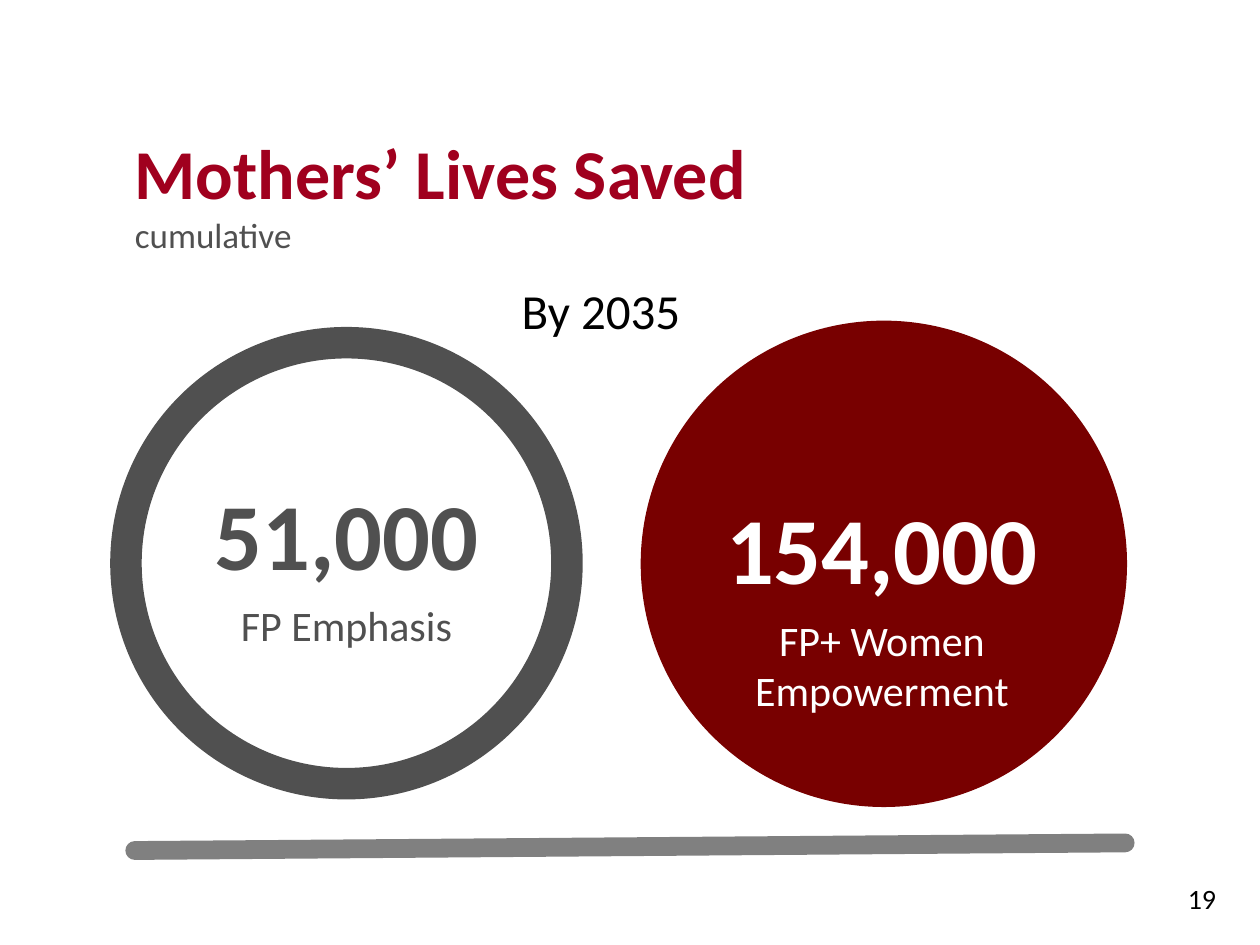
from dataclasses import dataclass
from lxml.etree import SubElement
from pptx import Presentation
from pptx.dml.color import RGBColor as Color
from pptx.enum.shapes import MSO_CONNECTOR as Connector, MSO_SHAPE as Shape
from pptx.enum.text import MSO_ANCHOR as Anchor, MSO_AUTO_SIZE as AutoSize, PP_ALIGN as Align
from pptx.oxml.ns import qn
from pptx.util import Pt


@dataclass(frozen=True)
class Theme:
    font: str = "Calibri"
    title: str = "A0001E"
    gray: str = "505050"
    red: str = "780000"
    white: str = "FFFFFF"
    black: str = "000000"
    rule: str = "808080"
    title_size: int = 40
    subtitle_size: int = 20
    number_size: int = 54
    label_size: int = 24
    date_size: int = 28
    page_size: int = 16
    outline: int = 18
    rule_width: float = 10.75


THEME = Theme()
TITLE = ("Mothers’ Lives Saved", "cumulative")
DATE = "By 2035"
PAGE_NUMBER = "19"
RESULTS = [
    dict(number="51,000", label="FP Emphasis", color=THEME.gray,
         circle=(72, 195.84, 252, 252), line=THEME.gray),
    dict(number="154,000", label="FP+ Women Empowerment", color=THEME.white,
         circle=(375.12, 192.24, 259.92, 259.92), line=THEME.red, fill=THEME.red,
         text_area=(340.56, 181.44, 326.88, 277.92), text_drop=24),
]
TITLE_AREA = (69.84, 70.56, 580.32, 59.76)
DATE_AREA = (181.44, 156.96, 324, 41.04)
PAGE_AREA = (618.48, 500.4, 83.52, 19.44)
BASELINE = (77.04, 486, 642.96, 481.68)


def points(values):
    return [Pt(value) for value in values]


def add_text(para, text, size, color, bold=False, align=Align.LEFT, after=0):
    para.alignment = align
    para.space_before, para.space_after = Pt(0), Pt(after)
    span = para.add_run()
    span.text = text
    span.font.name, span.font.size, span.font.bold = THEME.font, Pt(size), bold
    span.font.color.rgb = Color.from_string(color)


def add_box(page, area, text, **style):
    frame = page.shapes.add_textbox(*points(area)).text_frame
    frame.word_wrap = True
    add_text(frame.paragraphs[0], text, **style)


def add_circle(page, area, line=None, fill=None):
    circle = page.shapes.add_shape(Shape.OVAL, *points(area))
    circle.shadow.inherit = False
    if fill:
        circle.fill.solid()
        circle.fill.fore_color.rgb = Color.from_string(fill)
    else:
        circle.fill.background()
    if line:
        circle.line.color.rgb = Color.from_string(line)
        circle.line.width = Pt(THEME.outline)
    else:
        circle.line.fill.background()
    return circle


def add_result(page, number, label, color, circle, line, fill=None, text_area=None, text_drop=0):
    holder = add_circle(page, circle, line, fill)
    if text_area:
        holder = add_circle(page, text_area)
    frame = holder.text_frame
    frame.word_wrap, frame.vertical_anchor = True, Anchor.MIDDLE
    frame.margin_top = Pt(3.6 + 2 * text_drop)
    add_text(frame.paragraphs[0], number, size=THEME.number_size, color=color,
             bold=True, align=Align.CENTER, after=6)
    add_text(frame.add_paragraph(), label, size=THEME.label_size, color=color, align=Align.CENTER)


def add_title(page):
    title = page.shapes.title
    title.left, title.top, title.width, title.height = points(TITLE_AREA)
    frame = title.text_frame
    frame.auto_size, frame.vertical_anchor = AutoSize.NONE, Anchor.TOP
    para = frame.paragraphs[0]
    heading, subtitle = TITLE
    add_text(para, heading, size=THEME.title_size, color=THEME.title, bold=True)
    para.add_line_break()
    add_text(para, subtitle, size=THEME.subtitle_size, color=THEME.gray)


def add_baseline(page):
    rule = page.shapes.add_connector(Connector.STRAIGHT, *points(BASELINE))
    rule.line.color.rgb = Color.from_string(THEME.rule)
    rule.line.width = Pt(THEME.rule_width)
    rule.line._get_or_add_ln().set("cap", "rnd")
    SubElement(rule._element.spPr, qn("a:effectLst"))


def main():
    deck = Presentation()
    deck.slide_width, deck.slide_height = Pt(720), Pt(540)
    page = deck.slides.add_slide(deck.slide_layouts[5])
    add_title(page)
    for result in RESULTS:
        add_result(page, **result)
    add_box(page, DATE_AREA, DATE, size=THEME.date_size, color=THEME.black, align=Align.CENTER)
    add_baseline(page)
    add_box(page, PAGE_AREA, PAGE_NUMBER, size=THEME.page_size, color=THEME.black, align=Align.RIGHT)
    deck.save("out.pptx")


if __name__ == "__main__":
    main()
